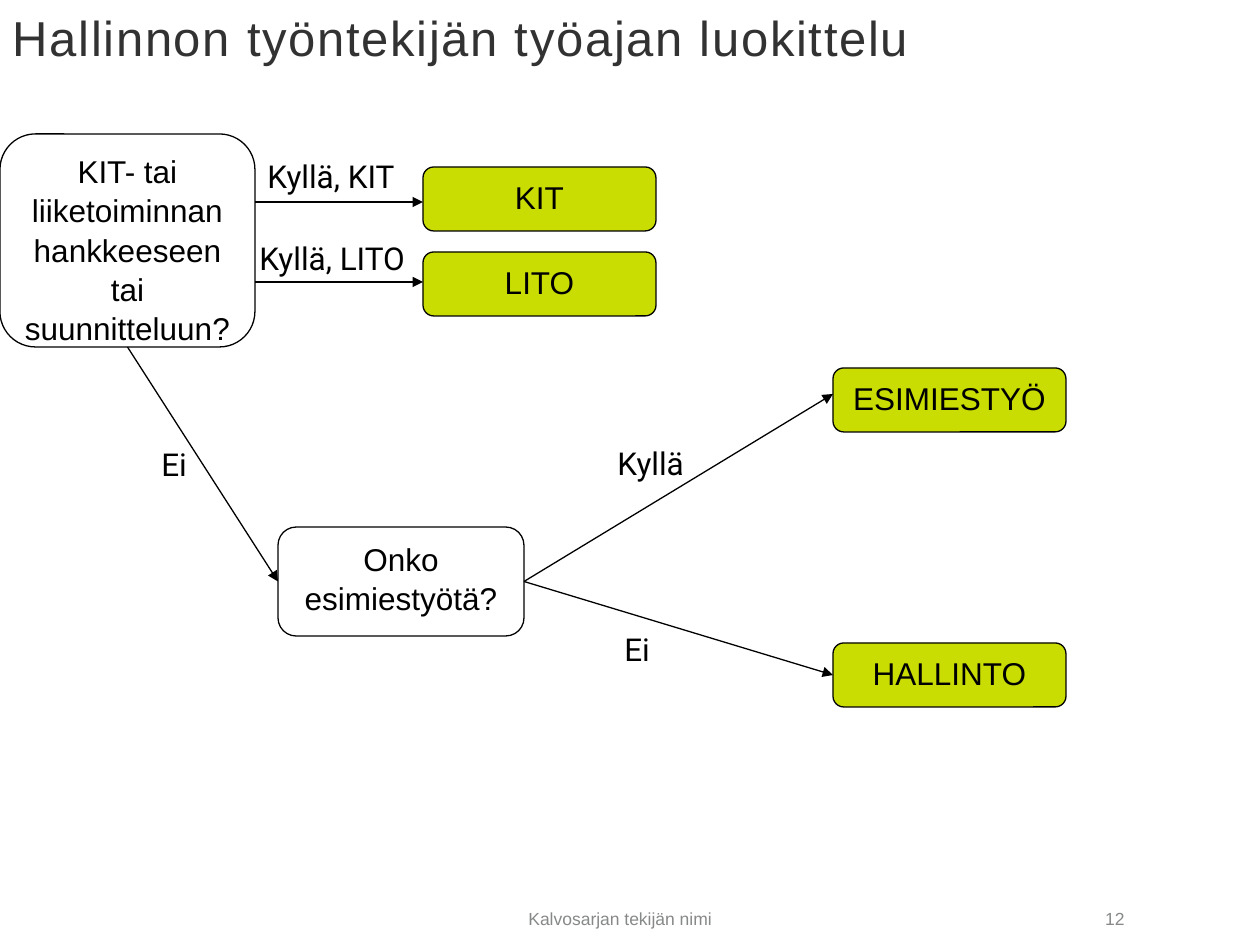
import pptx
import pptx.util
import pptx.dml.color
import pptx.enum.shapes
import pptx.enum.text
import pptx.oxml
import pptx.oxml.ns

EMU_PER_PX = 914400 / 126
BLACK = pptx.dml.color.RGBColor(0x00, 0x00, 0x00)
WHITE = pptx.dml.color.RGBColor(0xFF, 0xFF, 0xFF)
LIME = pptx.dml.color.RGBColor(0xC9, 0xDD, 0x03)
CHARCOAL = pptx.dml.color.RGBColor(0x32, 0x32, 0x32)
GRAY = pptx.dml.color.RGBColor(0x87, 0x89, 0x89)
LEFT = pptx.enum.text.PP_ALIGN.LEFT
CENTER = pptx.enum.text.PP_ALIGN.CENTER
RIGHT = pptx.enum.text.PP_ALIGN.RIGHT
TOP = pptx.enum.text.MSO_ANCHOR.TOP
MIDDLE = pptx.enum.text.MSO_ANCHOR.MIDDLE
BOTTOM_SITE, LEFT_SITE, RIGHT_SITE = 2, 1, 3
RESULT_SIZE = (233, 64)


def px(*lengths):
    return [pptx.util.Emu(round(length * EMU_PER_PX)) for length in lengths]


def write(box, text, size, color, align, font="Arial", anchor=TOP, wrap=True):
    frame = box.text_frame
    frame.word_wrap = wrap
    frame.vertical_anchor = anchor
    para = frame.paragraphs[0]
    para.text = text
    para.alignment = align
    para.font.name = font
    para.font.size = pptx.util.Pt(size)
    para.font.color.rgb = color
    return para


def add_title(page, text):
    title = page.shapes.title
    title.left, title.top, title.width, title.height = px(0, 0, 1260, 73)
    para = write(title, text, 28, CHARCOAL, LEFT, anchor=MIDDLE)
    para.runs[0].font._element.set("spc", "100")


def add_node(page, text, left, top, width, height, fill):
    node = page.shapes.add_shape(
        pptx.enum.shapes.MSO_SHAPE.ROUNDED_RECTANGLE, *px(left, top, width, height))
    node.shadow.inherit = False
    node.fill.solid()
    node.fill.fore_color.rgb = fill
    node.line.color.rgb = BLACK
    node.line.width = pptx.util.Pt(0.75)
    write(node, text, 18, BLACK, CENTER).line_spacing = 1.04
    return node


def add_result(page, text, left, top):
    return add_node(page, text, left, top, *RESULT_SIZE, LIME)


def add_label(page, text, left, top, width):
    label = page.shapes.add_textbox(*px(left, top, width, 50))
    write(label, text, 18, BLACK, LEFT, font="Roboto", wrap=False)
    label.text_frame.auto_size = pptx.enum.text.MSO_AUTO_SIZE.SHAPE_TO_FIT_TEXT


def add_footer(page, text, left, width, align):
    footer = page.shapes.add_textbox(*px(left, 902, width, 43))
    write(footer, text, 10, GRAY, align)


def add_arrow(page, start, end):
    arrow = page.shapes.add_connector(
        pptx.enum.shapes.MSO_CONNECTOR.STRAIGHT, *px(*start, *end))
    arrow.line.color.rgb = BLACK
    arrow.line.width = pptx.util.Pt(0.75)
    head = pptx.oxml.parse_xml(
        f'<a:tailEnd {pptx.oxml.ns.nsdecls("a")} type="triangle"/>')
    arrow.line._get_or_add_ln().append(head)
    arrow._element.spPr.append(
        pptx.oxml.parse_xml(f'<a:effectLst {pptx.oxml.ns.nsdecls("a")}/>'))
    return arrow


def main():
    deck = pptx.Presentation()
    deck.slide_width, deck.slide_height = px(1260, 945)
    page = deck.slides.add_slide(deck.slide_layouts[5])
    add_title(page, "Hallinnon työntekijän työajan luokittelu")

    project = add_node(
        page, "KIT- tai liiketoiminnan hankkeeseen tai suunnitteluun?",
        0, 134, 255, 213, WHITE)
    manager = add_node(page, "Onko esimiestyötä?", 278, 527, 246, 109, WHITE)
    add_result(page, "KIT", 423, 167)
    add_result(page, "LITO", 423, 252)
    add_result(page, "ESIMIESTYÖ", 833, 368)
    admin = add_result(page, "HALLINTO", 833, 643)

    for level in (202, 282):
        add_arrow(page, (255, level), (423, level))
    project_no = add_arrow(page, (128, 347), (278, 581))
    project_no.begin_connect(project, BOTTOM_SITE)
    project_no.end_connect(manager, LEFT_SITE)
    manager_yes = add_arrow(page, (524, 581), (833, 394))
    manager_yes.begin_connect(manager, RIGHT_SITE)
    manager_no = add_arrow(page, (524, 581), (833, 675))
    manager_no.begin_connect(manager, RIGHT_SITE)
    manager_no.end_connect(admin, LEFT_SITE)

    for text, left, top, width in (
            ("Kyllä, KIT", 255, 151, 168),
            ("Kyllä, LITO", 247, 233, 178),
            ("Ei", 149, 439, 52),
            ("Kyllä", 605, 438, 103),
            ("Ei", 612, 624, 52)):
        add_label(page, text, left, top, width)

    add_footer(page, "Kalvosarjan tekijän nimi", 315, 610, CENTER)
    add_footer(page, "12", 935, 202, RIGHT)
    deck.save("out.pptx")


if __name__ == "__main__":
    main()
